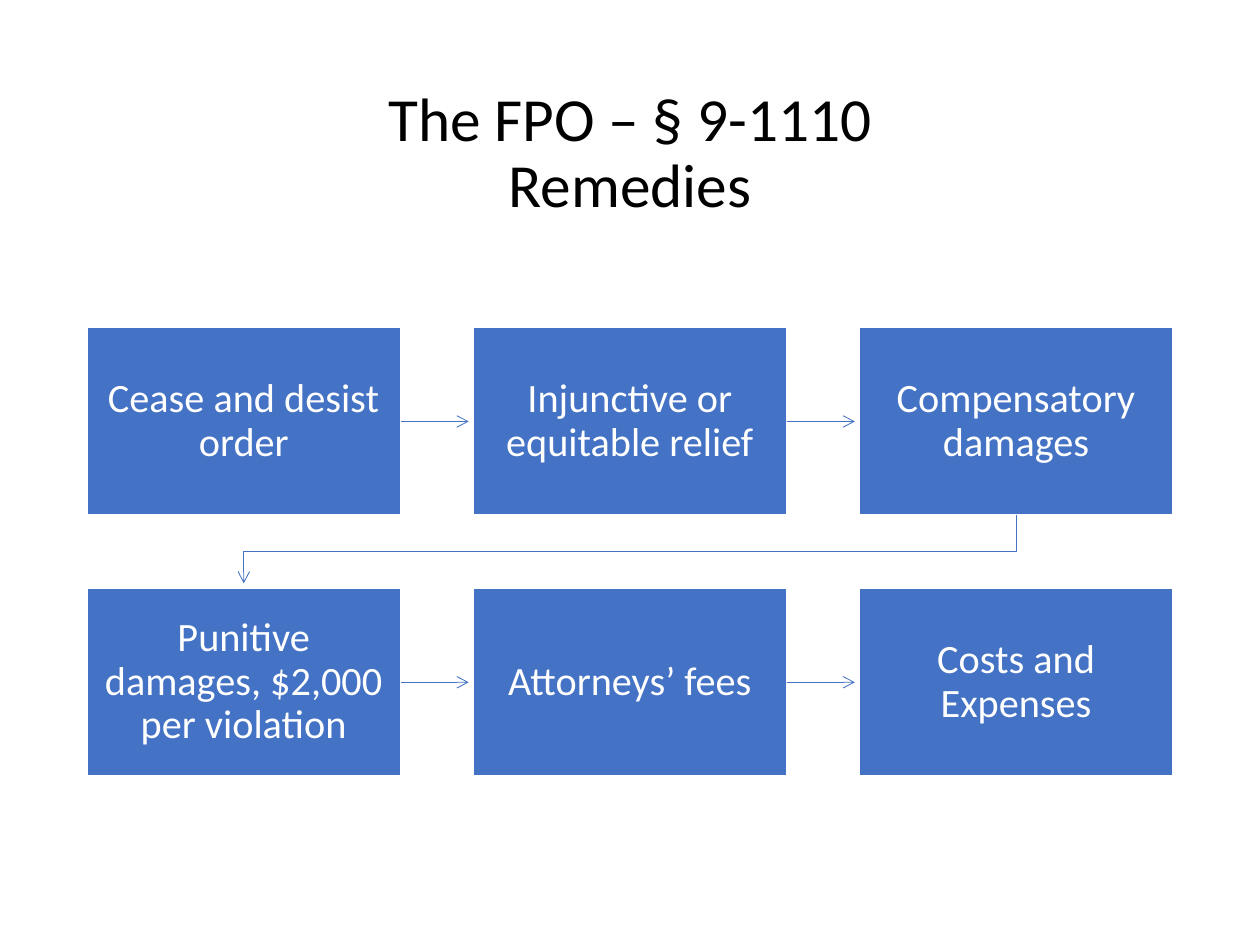
from lxml import etree
from pptx import Presentation
from pptx import util as u
from pptx.dml.color import RGBColor
from pptx.enum import shapes, text
from pptx.oxml.ns import qn

BLUE, WHITE, BLACK = "4472C4", "FFFFFF", "000000"
LEFT, TOP, WIDTH, HEIGHT = 0.69, 2.6, 2.49, 1.49
STEP_X, STEP_Y = 3.065, 2.07
ARROW = 0.54
REMEDIES = [
    ["Cease and desist order", "Injunctive or equitable relief", "Compensatory damages"],
    ["Punitive damages, $2,000 per violation", "Attorneys’ fees", "Costs and Expenses"],
]


def color(value):
    return RGBColor.from_string(value)


def set_attrs(obj, values):
    for name, value in values.items():
        setattr(obj, name, value)


def write(sp, content, size, hex_color, margins, space_after=0):
    tf = sp.text_frame
    x, y = (u.Inches(m) for m in margins)
    set_attrs(tf, {"word_wrap": True, "vertical_anchor": text.MSO_ANCHOR.MIDDLE,
                   "margin_left": x, "margin_right": x,
                   "margin_top": y, "margin_bottom": y})
    p = tf.paragraphs[0]
    p.text = content
    set_attrs(p, {"alignment": text.PP_ALIGN.CENTER, "line_spacing": 0.9,
                  "space_after": u.Pt(space_after)})
    for r in p.runs:
        set_attrs(r.font, {"name": "Calibri", "size": u.Pt(size)})
        r.font.color.rgb = color(hex_color)


def add_title(s, content):
    sp = s.shapes.add_textbox(*map(u.Inches, (LEFT, 0.61, 8.62, 1.24)))
    write(sp, content, 35, BLACK, (0.1, 0.05))


def add_box(s, content, left, top):
    sp = s.shapes.add_shape(shapes.MSO_SHAPE.RECTANGLE,
                            *map(u.Inches, (left, top, WIDTH, HEIGHT)))
    sp.shadow.inherit = False
    sp.fill.solid()
    sp.fill.fore_color.rgb = color(BLUE)
    sp.line.color.rgb = color(WHITE)
    sp.line.width = u.Pt(1)
    write(sp, content, 23, WHITE, (0.12, 0.13), 8)
    return sp


def style_arrow(sp):
    sp.line.color.rgb = color(BLUE)
    sp.line.width = u.Pt(0.5)
    etree.SubElement(sp.line._get_or_add_ln(), qn("a:tailEnd"), type="arrow")


def add_arrow(s, box):
    x, y = box.left + box.width, box.top + box.height // 2
    sp = s.shapes.add_connector(shapes.MSO_CONNECTOR.STRAIGHT,
                                x, y, x + u.Inches(ARROW), y)
    sp.begin_connect(box, 3)
    style_arrow(sp)
    etree.SubElement(sp._element.spPr, qn("a:effectLst"))


def add_return_arrow(s, start, end):
    x1, x2 = (b.left + b.width // 2 for b in (start, end))
    y = start.top + start.height
    middle = (y + end.top) // 2
    fb = s.shapes.build_freeform(x1, y)
    fb.add_line_segments([(x1, middle), (x2, middle), (x2, y + u.Inches(ARROW))],
                         close=False)
    sp = fb.convert_to_shape()
    sp.shadow.inherit = False
    sp.fill.background()
    style_arrow(sp)


def main():
    prs = Presentation()
    set_attrs(prs, {"slide_width": u.Inches(10), "slide_height": u.Inches(7.5)})
    s = prs.slides.add_slide(prs.slide_layouts[6])
    add_title(s, "The FPO – § 9-1110\nRemedies")
    rows = [[add_box(s, content, LEFT + col * STEP_X, TOP + row * STEP_Y)
             for col, content in enumerate(contents)]
            for row, contents in enumerate(REMEDIES)]
    for boxes in rows:
        for box in boxes[:-1]:
            add_arrow(s, box)
    add_return_arrow(s, rows[0][-1], rows[1][0])
    prs.save("out.pptx")


if __name__ == "__main__":
    main()
